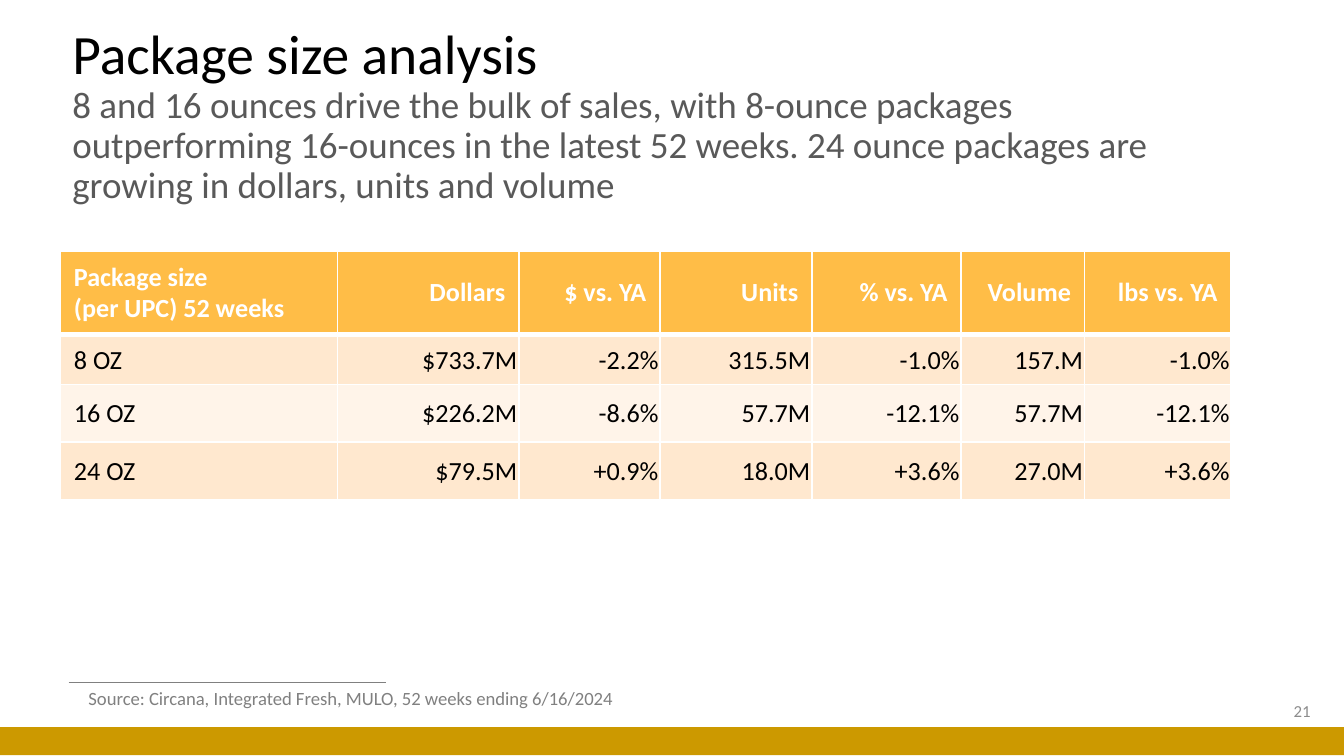
from lxml.etree import SubElement
from pptx import Presentation
from pptx.dml.color import RGBColor
from pptx.enum.shapes import MSO_CONNECTOR, MSO_SHAPE
from pptx.enum.text import MSO_ANCHOR as Anchor, MSO_AUTO_SIZE as AutoSize, PP_ALIGN as Align
from pptx.oxml.ns import qn
from pptx.util import Inches, Pt

BLACK = RGBColor(0x00, 0x00, 0x00)
WHITE = RGBColor(0xFF, 0xFF, 0xFF)
DARK_GRAY = RGBColor(0x59, 0x59, 0x59)
GRAY = RGBColor(0x80, 0x80, 0x80)
LIGHT_GRAY = RGBColor(0x8C, 0x8C, 0x8C)
GOLD = RGBColor(0xCC, 0x99, 0x00)
HEADER_ORANGE = RGBColor(0xFF, 0xBD, 0x47)
BAND_DARK = RGBColor(0xFF, 0xE8, 0xCF)
BAND_LIGHT = RGBColor(0xFF, 0xF4, 0xE9)

COLUMN_WIDTHS = [2.06, 1.35, 1.05, 1.13, 1.11, 0.92, 1.09]
ROW_HEIGHTS = [0.62, 0.37, 0.43, 0.43]
PACKAGE_ROWS = [
    ["Package size \v(per UPC) 52 weeks", "Dollars", "$ vs. YA", "Units",
     "% vs. YA", "Volume", "lbs vs. YA"],
    ["8 OZ", "$733.7M", "-2.2%", "315.5M", "-1.0%", "157.M", "-1.0%"],
    ["16 OZ", "$226.2M", "-8.6%", "57.7M", "-12.1%", "57.7M", "-12.1%"],
    ["24 OZ", "$79.5M", "+0.9%", "18.0M", "+3.6%", "27.0M", "+3.6%"],
]


def set_attributes(target, values):
    for name, value in values.items():
        setattr(target, name, value)


class SlideBuilder:
    font_name = "Calibri"

    def __init__(self, slide):
        self.slide = slide

    def format_run(self, run, size, color, bold=False):
        set_attributes(run.font, {"name": self.font_name, "size": Pt(size), "bold": bold})
        run.font.color.rgb = color

    def rule(self, left, top, right, color, width):
        line = self.slide.shapes.add_connector(
            MSO_CONNECTOR.STRAIGHT, Inches(left), Inches(top), Inches(right), Inches(top))
        line.line.color.rgb = color
        line.line.width = Pt(width)
        SubElement(line._element.spPr, qn("a:effectLst"))

    def bar(self, left, top, width, height, color):
        shape = self.slide.shapes.add_shape(
            MSO_SHAPE.RECTANGLE, Inches(left), Inches(top), Inches(width), Inches(height))
        shape.shadow.inherit = False
        shape.fill.solid()
        shape.fill.fore_color.rgb = color
        shape.line.fill.background()

    def text(self, left, top, width, height, lines, frame_format, paragraph_format):
        """Add one paragraph whose (text, size, color) lines are parted by line breaks."""
        box = self.slide.shapes.add_textbox(
            Inches(left), Inches(top), Inches(width), Inches(height))
        set_attributes(box.text_frame, frame_format)
        paragraph = box.text_frame.paragraphs[0]
        set_attributes(paragraph, paragraph_format)
        for index, (wording, size, color) in enumerate(lines):
            if index:
                paragraph.add_line_break()
            run = paragraph.add_run()
            run.text = wording
            self.format_run(run, size, color)

    def cell_borders(self, cell, bottom_width):
        properties = cell._tc.get_or_add_tcPr()
        for side, width in {"L": 1, "R": 1, "T": 1, "B": bottom_width}.items():
            border = SubElement(properties, qn(f"a:ln{side}"), w=str(Pt(width)))
            fill = SubElement(border, qn("a:solidFill"))
            SubElement(fill, qn("a:srgbClr"), val=str(WHITE))

    def cell(self, cell, wording, is_header, is_label, fill, size=14):
        self.cell_borders(cell, 3 if is_header else 1)
        cell.fill.solid()
        cell.fill.fore_color.rgb = fill
        cell.vertical_anchor = Anchor.MIDDLE
        if not is_header:
            side = Inches(0.1 if is_label else 0.01)
            set_attributes(cell, {"margin_left": side, "margin_right": side,
                                  "margin_top": Inches(0.01), "margin_bottom": 0})
        paragraph = cell.text_frame.paragraphs[0]
        paragraph.text = wording
        paragraph.alignment = Align.LEFT if is_label else Align.RIGHT
        for run in paragraph.runs:
            self.format_run(run, size, WHITE if is_header else BLACK, is_header)
        for line_break in paragraph._p.findall(qn("a:br")):
            SubElement(line_break, qn("a:rPr"), sz=str(size * 100))

    def table(self, left, top, widths, heights, rows):
        table = self.slide.shapes.add_table(
            len(rows), len(widths), Inches(left), Inches(top),
            Inches(sum(widths)), Inches(sum(heights))).table
        table.horz_banding = False
        for column, width in zip(table.columns, widths):
            column.width = Inches(width)
        for row, height in zip(table.rows, heights):
            row.height = Inches(height)
        for r, row in enumerate(rows):
            fill = HEADER_ORANGE if r == 0 else (BAND_DARK if r % 2 else BAND_LIGHT)
            for c, wording in enumerate(row):
                self.cell(table.cell(r, c), wording, r == 0, c == 0, fill)


def main():
    presentation = Presentation()
    presentation.slide_width = Inches(10)
    presentation.slide_height = Inches(10) * 9 // 16
    builder = SlideBuilder(presentation.slides.add_slide(presentation.slide_layouts[6]))

    builder.rule(0.51, 5.08, 2.87, GRAY, 0.5)
    builder.bar(0, 5.41, 10, 0.21, GOLD)
    middle = {"word_wrap": True, "vertical_anchor": Anchor.MIDDLE}
    builder.text(
        0.44, 0.34, 8.53, 1.06,
        [("Package size analysis", 29.7, BLACK),
         ("8 and 16 ounces drive the bulk of sales, with 8-ounce packages outperforming "
          "16-ounces in the latest 52 weeks. 24 ounce packages are growing in dollars, "
          "units and volume", 19.8, DARK_GRAY)],
        middle, {"line_spacing": 0.9})
    builder.text(7.6, 5.14, 2.25, 0.3, [("21", 9, LIGHT_GRAY)],
                 middle, {"alignment": Align.RIGHT})
    builder.text(
        0.56, 5.06, 4.18, 0.27,
        [("Source: Circana, Integrated Fresh, MULO, 52 weeks ending 6/16/2024", 10, GRAY)],
        {"word_wrap": False, "auto_size": AutoSize.SHAPE_TO_FIT_TEXT},
        {"alignment": Align.LEFT})
    builder.table(0.45, 1.87, COLUMN_WIDTHS, ROW_HEIGHTS, PACKAGE_ROWS)

    presentation.save("out.pptx")


if __name__ == "__main__":
    main()
